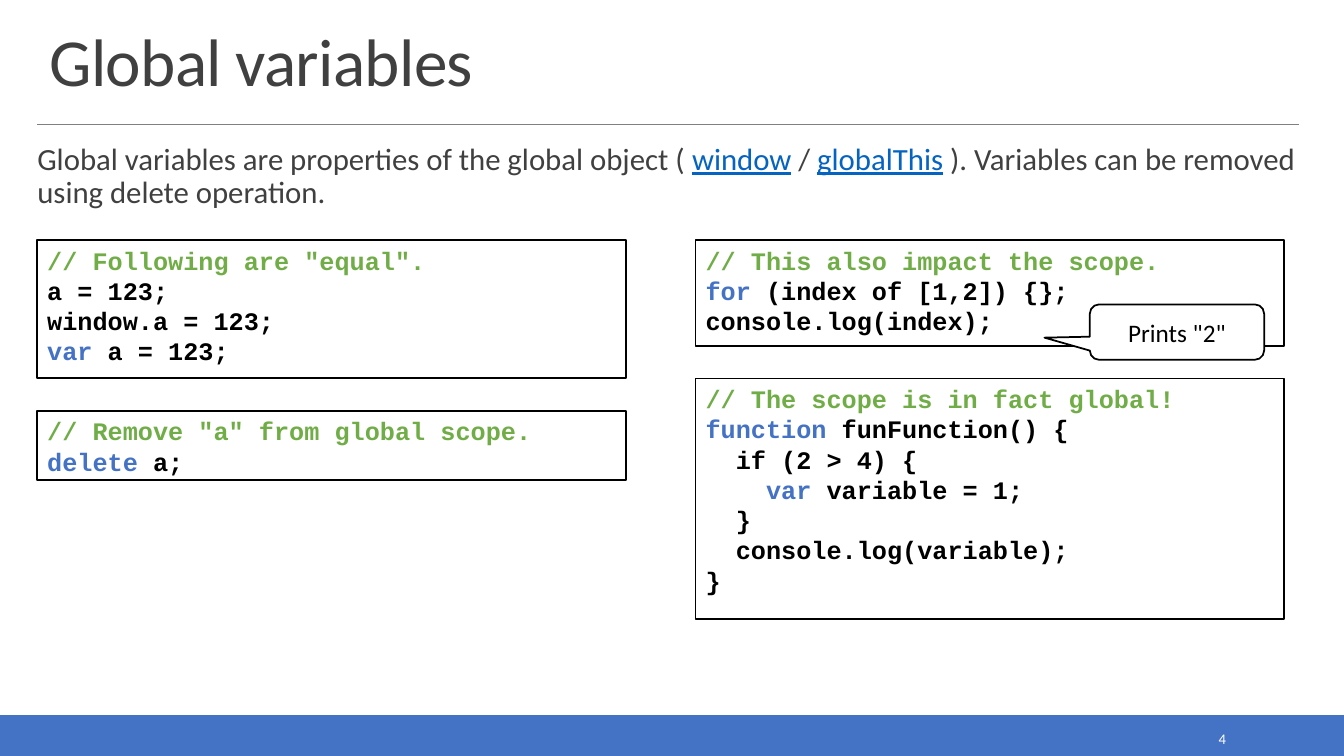
from dataclasses import dataclass

from lxml.etree import SubElement
from pptx import Presentation
from pptx.dml.color import RGBColor
from pptx.enum.shapes import MSO_CONNECTOR, MSO_SHAPE
from pptx.enum.text import MSO_ANCHOR, MSO_AUTO_SIZE, PP_ALIGN
from pptx.oxml.ns import qn
from pptx.util import Inches, Pt


@dataclass(frozen=True)
class Theme:
    """Colours, fonts and type sizes of the slide."""
    heading: str = "404040"
    ink: str = "000000"
    paper: str = "FFFFFF"
    accent: str = "4472C4"
    comment: str = "70AD47"
    link: str = "0563C1"
    rule: str = "808080"
    text_font: str = "Calibri"
    code_font: str = "Courier New"
    title_size: float = 48
    body_size: float = 22
    code_size: float = 18
    number_size: float = 10.5
    border: float = 1.25
    hairline: float = 0.5


@dataclass(frozen=True)
class Box:
    """A rectangle in slide units."""
    left: int
    top: int
    width: int
    height: int

    def inner(self, left, top, width, height):
        """Return an inner box given in percent of this one."""
        return Box(
            round(self.left + self.width * left / 100),
            round(self.top + self.height * top / 100),
            round(self.width * width / 100),
            round(self.height * height / 100),
        )

    def frame(self):
        """Return the four lengths that place a shape."""
        return self.left, self.top, self.width, self.height


THEME = Theme()
COLUMN_STEP = 48.98
COLUMN_WIDTH = 43.8
BLOCK_GAP = 4.33

EQUAL_CODE = [
    [('// Following are "equal".', THEME.comment)],
    [("a = 123;", THEME.ink)],
    [("window.a = 123;", THEME.ink)],
    [("var", THEME.accent), (" a = 123;", THEME.ink)],
]
DELETE_CODE = [
    [('// Remove "a" from global scope.', THEME.comment)],
    [("delete", THEME.accent), (" a;", THEME.ink)],
]
LOOP_CODE = [
    [("// This also impact the scope.", THEME.comment)],
    [("for", THEME.accent), (" (index of [1,2]) {};", THEME.ink)],
    [("console.log(index);", THEME.ink)],
]
FUNCTION_CODE = [
    [("// The scope is in fact global!", THEME.comment)],
    [("function ", THEME.accent), ("funFunction() {", THEME.ink)],
    [("  if (2 > 4) {", THEME.ink)],
    [("    ", THEME.ink), ("var", THEME.accent), (" variable = 1;", THEME.ink)],
    [("  }", THEME.ink)],
    [("  console.log(variable);", THEME.ink)],
    [("}", THEME.ink)],
]
CODE_COLUMNS = [
    [(18.27, EQUAL_CODE), (9.2, DELETE_CODE)],
    [(14, LOOP_CODE), (31.87, FUNCTION_CODE)],
]


def color(value):
    """Turn a hexadecimal value into a colour."""
    return RGBColor.from_string(value)


def add_run(paragraph, text, ink, size, font=THEME.text_font, bold=False):
    """Append one formatted run to a paragraph."""
    run = paragraph.add_run()
    run.text = text
    run.font.name = font
    run.font.size = Pt(size)
    run.font.bold = bold
    run.font.color.rgb = color(ink)
    return run


def add_panel(slide, preset, box, fill=None, line=THEME.ink):
    """Add a flat outlined shape, filled when a fill is given."""
    shape = slide.shapes.add_shape(preset, *box.frame())
    shape.shadow.inherit = False
    if fill:
        shape.fill.solid()
        shape.fill.fore_color.rgb = color(fill)
    else:
        shape.fill.background()
    shape.line.color.rgb = color(line)
    shape.line.width = Pt(THEME.border)
    return shape


def add_header(slide, page):
    """Place the title and the rule below it."""
    title = slide.shapes.title
    title.left, title.top, title.width, title.height = page.inner(2.93, 2.67, 93.9, 11.2).frame()
    frame = title.text_frame
    frame.auto_size = MSO_AUTO_SIZE.NONE
    frame.vertical_anchor = MSO_ANCHOR.BOTTOM
    paragraph = frame.paragraphs[0]
    paragraph.alignment = PP_ALIGN.LEFT
    paragraph.line_spacing = 0.85
    run = add_run(paragraph, "Global variables", THEME.heading, THEME.title_size)
    run.font._element.set("spc", "-50")

    rule = page.inner(2.78, 16.4, 93.9, 0)
    right = rule.left + rule.width
    connector = slide.shapes.add_connector(
        MSO_CONNECTOR.STRAIGHT, rule.left, rule.top, right, rule.top)
    connector.line.color.rgb = color(THEME.rule)
    connector.line.width = Pt(THEME.hairline)
    SubElement(connector._element.spPr, qn("a:effectLst"))


def add_introduction(slide, box):
    """Place the paragraph with its two underlined terms."""
    frame = slide.shapes.add_textbox(*box.frame()).text_frame
    frame.word_wrap = True
    frame.margin_left = frame.margin_right = 0
    frame.margin_top = frame.margin_bottom = Inches(0.04)
    paragraph = frame.paragraphs[0]
    paragraph.line_spacing = 0.9
    paragraph.space_before = Pt(12)
    paragraph.space_after = Pt(2)
    for text, ink in [
        ("Global variables are properties of the global object ( ", THEME.heading),
        ("window", THEME.link),
        (" / ", THEME.heading),
        ("globalThis", THEME.link),
        (" ). Variables can be removed using delete operation.", THEME.heading),
    ]:
        run = add_run(paragraph, text, ink, THEME.body_size)
        run.font.underline = ink == THEME.link


def add_code(slide, box, lines):
    """Place one framed block of code."""
    frame = add_panel(slide, MSO_SHAPE.RECTANGLE, box).text_frame
    frame.word_wrap = True
    frame.vertical_anchor = MSO_ANCHOR.TOP
    for index, line in enumerate(lines):
        paragraph = frame.add_paragraph() if index else frame.paragraphs[0]
        paragraph.alignment = PP_ALIGN.LEFT
        for text, ink in line:
            add_run(paragraph, text, ink, THEME.code_size, THEME.code_font, True)


def add_callout(slide, box):
    """Place the speech bubble that tells the printed value."""
    callout = add_panel(slide, MSO_SHAPE.ROUNDED_RECTANGULAR_CALLOUT, box, THEME.paper)
    for index, value in enumerate((-0.76, 0.1, 0.17)):
        callout.adjustments[index] = value
    callout.text_frame.vertical_anchor = MSO_ANCHOR.MIDDLE
    paragraph = callout.text_frame.paragraphs[0]
    paragraph.alignment = PP_ALIGN.CENTER
    add_run(paragraph, 'Prints "2"', THEME.ink, THEME.code_size)


def add_code_columns(slide, page):
    """Stack the code blocks in two columns and add the callout."""
    for column, blocks in enumerate(CODE_COLUMNS):
        top = 31.73
        for height, lines in blocks:
            box = page.inner(2.78 + column * COLUMN_STEP, top, COLUMN_WIDTH, height)
            add_code(slide, box, lines)
            if lines is LOOP_CODE:
                loop_box = box
            top += height + BLOCK_GAP
    add_callout(slide, loop_box.inner(66.95, 60.95, 29.62, 52.38))


def add_footer(slide, page):
    """Place the footer band and the slide number."""
    band = page.inner(0, 94.67, 100, 5.33)
    add_panel(slide, MSO_SHAPE.RECTANGLE, band, THEME.accent, THEME.accent)
    number = page.inner(81.23, 95.87, 10.73, 3.73)
    frame = slide.shapes.add_textbox(*number.frame()).text_frame
    frame.word_wrap = True
    frame.vertical_anchor = MSO_ANCHOR.MIDDLE
    paragraph = frame.paragraphs[0]
    paragraph.alignment = PP_ALIGN.RIGHT
    add_run(paragraph, "4", THEME.paper, THEME.number_size)


def main():
    """Build the slide and save the presentation."""
    presentation = Presentation()
    presentation.slide_width = Inches(13.33)
    presentation.slide_height = Inches(7.5)
    slide = presentation.slides.add_slide(presentation.slide_layouts[5])
    page = Box(0, 0, presentation.slide_width, presentation.slide_height)
    add_footer(slide, page)
    add_header(slide, page)
    add_introduction(slide, page.inner(2.78, 18.53, 93.9, 11.2))
    add_code_columns(slide, page)
    presentation.save("out.pptx")


if __name__ == "__main__":
    main()
